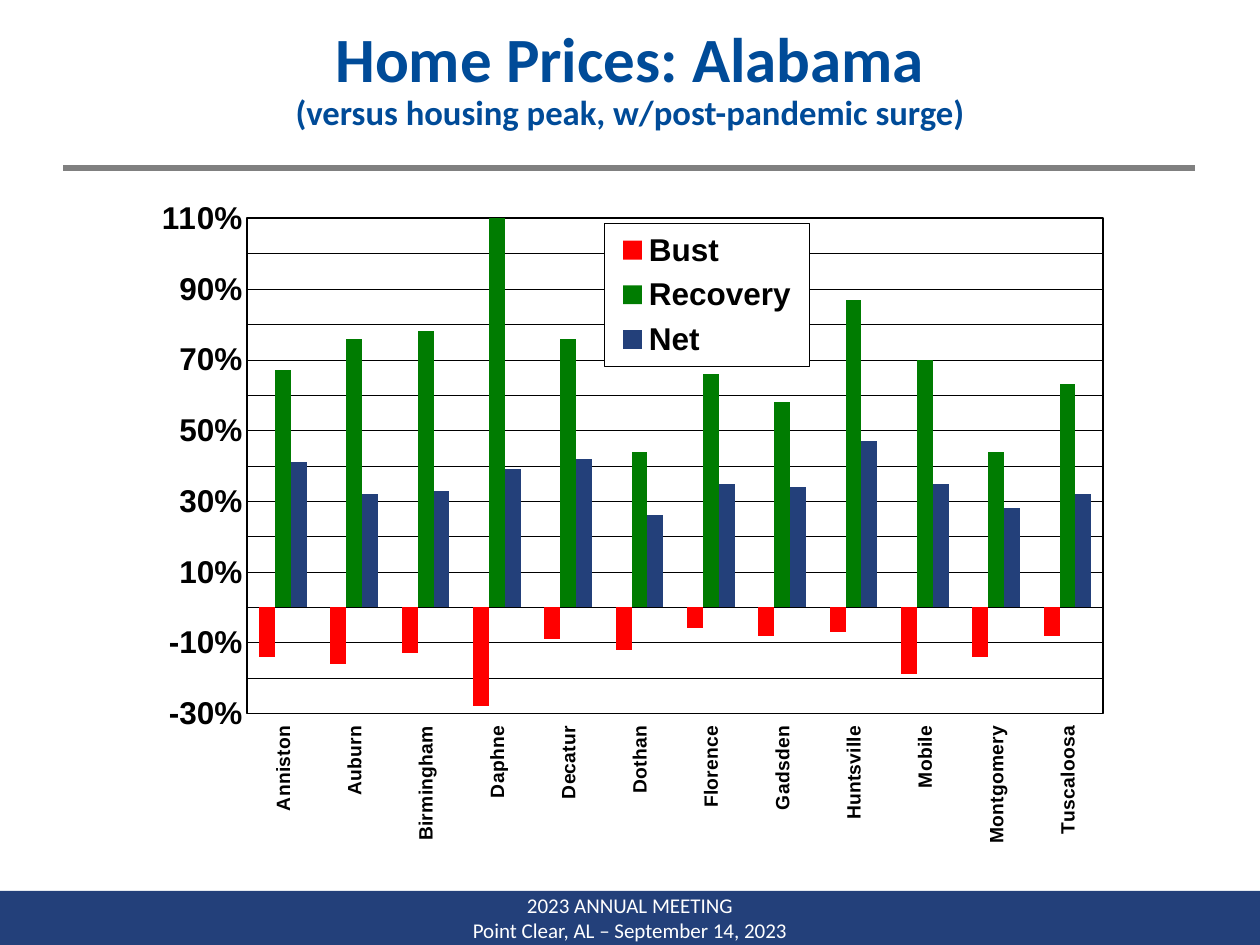
from pptx import Presentation
from pptx.chart.data import CategoryChartData
from pptx.dml.color import RGBColor
from pptx.enum.chart import XL_CHART_TYPE as Kind, XL_LEGEND_POSITION as Side
from pptx.enum.chart import XL_TICK_LABEL_POSITION as Label, XL_TICK_MARK as Tick
from pptx.enum.shapes import MSO_CONNECTOR as Link, MSO_SHAPE as Shape
from pptx.enum.text import MSO_ANCHOR as Anchor, MSO_AUTO_SIZE as Fit, PP_ALIGN as Align
from pptx.oxml import parse_xml
from pptx.oxml.ns import nsdecls
from pptx.util import Emu, Pt

BLACK = RGBColor(0x00, 0x00, 0x00)
WHITE = RGBColor(0xFF, 0xFF, 0xFF)
GRAY = RGBColor(0x80, 0x80, 0x80)
BLUE = RGBColor(0x00, 0x4B, 0x98)
NAVY = RGBColor(0x23, 0x40, 0x7A)
RED = RGBColor(0xFF, 0x00, 0x00)
GREEN = RGBColor(0x00, 0x7C, 0x01)

CITIES = ["Anniston", "Auburn", "Birmingham", "Daphne", "Decatur", "Dothan",
          "Florence", "Gadsden", "Huntsville", "Mobile", "Montgomery", "Tuscaloosa"]
SERIES = [
    ("Bust", RED, [-0.14, -0.16, -0.13, -0.28, -0.09, -0.12,
                   -0.06, -0.08, -0.07, -0.19, -0.14, -0.08]),
    ("Recovery", GREEN, [0.67, 0.76, 0.78, 1.1, 0.76, 0.44,
                         0.66, 0.58, 0.87, 0.7, 0.44, 0.63]),
    ("Net", NAVY, [0.41, 0.32, 0.33, 0.39, 0.42, 0.26,
                   0.35, 0.34, 0.47, 0.35, 0.28, 0.32]),
]


def px(n):
    return Emu(round(n * 914400 / 126))


def box(*sides):
    return [px(n) for n in sides]


def style(font, name, size, color, bold=False):
    font.name, font.size, font.bold = name, Pt(size), bold
    font.color.rgb = color


def add_title(slide, head, sub):
    title = slide.shapes.title
    title.left, title.top, title.width, title.height = box(63, 38, 1134, 98)
    frame = title.text_frame
    frame.auto_size = Fit.NONE
    frame.vertical_anchor = Anchor.MIDDLE
    frame.margin_bottom = px(19)
    para = frame.paragraphs[0]
    para.alignment, para.line_spacing = Align.CENTER, 0.9
    for text, size in ((head, 36), (sub, 19.8)):
        if para.runs:
            para.add_line_break()
        run = para.add_run()
        run.text = text
        style(run.font, "Calibri", size, BLUE, True)


def add_rule(slide, left, right, y):
    rule = slide.shapes.add_connector(Link.STRAIGHT, *box(left, y, right, y))
    rule.line.color.rgb, rule.line.width = GRAY, Pt(3)
    rule.element.spPr.append(parse_xml(f"<a:effectLst {nsdecls('a')}/>"))


def add_footer(slide, lines):
    bar = slide.shapes.add_shape(Shape.RECTANGLE, *box(0, 891, 1260, 54))
    bar.shadow.inherit = False
    bar.fill.solid()
    bar.fill.fore_color.rgb = NAVY
    bar.line.fill.background()
    frame = bar.text_frame
    frame.word_wrap = False
    frame.vertical_anchor = Anchor.MIDDLE
    frame.text = "\n".join(lines)
    for para in frame.paragraphs:
        para.alignment = Align.CENTER
        style(para.font, "Calibri", 12, WHITE)


def layout(x, y, w, h, inner=False):
    target = '<c:layoutTarget val="inner"/>' if inner else ""
    return parse_xml(
        f"<c:layout {nsdecls('c')}><c:manualLayout>{target}"
        '<c:xMode val="edge"/><c:yMode val="edge"/>'
        f'<c:x val="{x}"/><c:y val="{y}"/><c:w val="{w}"/><c:h val="{h}"/>'
        "</c:manualLayout></c:layout>")


def frame_props(width, fill):
    return parse_xml(
        f"<c:spPr {nsdecls('c', 'a')}>{fill}<a:ln w=\"{Pt(width)}\"><a:solidFill>"
        f'<a:srgbClr val="{BLACK}"/></a:solidFill></a:ln></c:spPr>')


def set_line(line, width):
    line.color.rgb, line.width = BLACK, Pt(width)


def set_axis(axis, size):
    axis.major_tick_mark = axis.minor_tick_mark = Tick.NONE
    set_line(axis.format.line, 0.25)
    style(axis.tick_labels.font, "Arial", size, BLACK, True)


def set_legend(chart):
    chart.has_legend = True
    key = chart.legend
    key.position = Side.RIGHT
    key.include_in_layout = False
    style(key.font, "Arial", 18, BLACK, True)
    node = chart.element.xpath(".//c:legend")[0]
    node.xpath("c:legendPos")[0].addnext(layout(0.48, 0.05, 0.21, 0.21))
    fill = f'<a:solidFill><a:srgbClr val="{WHITE}"/></a:solidFill>'
    node.xpath("c:txPr")[0].addprevious(frame_props(0.25, fill))


def add_prices(slide):
    data = CategoryChartData(number_format="0%")
    data.categories = CITIES
    for name, _, vals in SERIES:
        data.add_series(name, vals)
    chart = slide.shapes.add_chart(
        Kind.COLUMN_CLUSTERED, *box(136, 189, 976, 683), data).chart
    chart.has_title = False
    style(chart.font, "Arial", 19.7, BLACK, True)

    # Bars
    plot = chart.plots[0]
    plot.gap_width, plot.overlap, plot.vary_by_categories = 150, 0, False
    for bars, (_, color, _) in zip(plot.series, SERIES):
        bars.invert_if_negative = False
        bars.format.fill.solid()
        bars.format.fill.fore_color.rgb = color

    # Axes
    cats, vals = chart.category_axis, chart.value_axis
    set_axis(cats, 11)
    set_axis(vals, 18)
    cats.tick_label_position = Label.LOW
    turn = chart.element.xpath(".//c:catAx/c:txPr/a:bodyPr")[0]
    turn.set("rot", "-5400000")
    turn.set("vert", "horz")
    vals.minimum_scale, vals.maximum_scale, vals.major_unit = -0.3, 1.1, 0.1
    vals.tick_labels.number_format = "0%"
    vals.tick_labels.number_format_is_linked = False
    vals.has_major_gridlines = True
    set_line(vals.major_gridlines.format.line, 0.25)

    # Plot frame and legend
    area = chart.element.xpath(".//c:plotArea")[0]
    for old in area.xpath("c:layout"):
        area.remove(old)
    area.insert(0, layout(0.114, 0.043, 0.877, 0.725, inner=True))
    area.append(frame_props(1, "<a:noFill/>"))
    set_legend(chart)


def main():
    deck = Presentation()
    deck.slide_width, deck.slide_height = px(1260), px(945)
    slide = deck.slides.add_slide(deck.slide_layouts[5])
    add_footer(slide, ["2023 ANNUAL MEETING", "Point Clear, AL – September 14, 2023"])
    add_rule(slide, 63, 1195, 168)
    add_title(slide, "Home Prices: Alabama",
              "(versus housing peak, w/post-pandemic surge)")
    add_prices(slide)
    deck.save("out.pptx")


if __name__ == "__main__":
    main()
